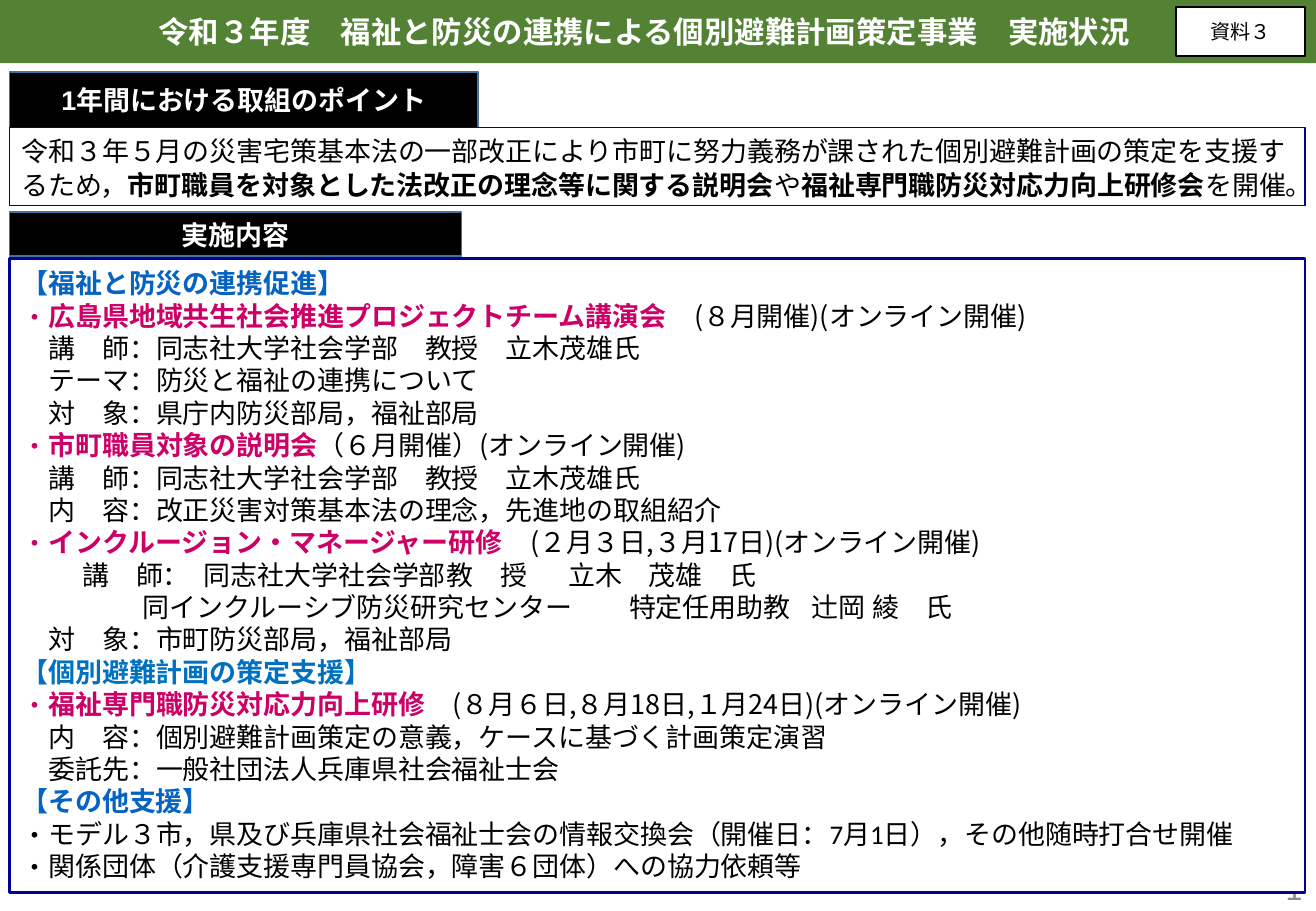
import dataclasses

import pptx
import pptx.dml.color
import pptx.enum.shapes
import pptx.enum.text
import pptx.oxml
import pptx.oxml.ns
import pptx.util

Cm = pptx.util.Cm
Pt = pptx.util.Pt
ALIGN = pptx.enum.text.PP_ALIGN
ANCHOR = pptx.enum.text.MSO_ANCHOR


@dataclasses.dataclass(frozen=True)
class Theme:
    green: str = "548235"
    navy: str = "000099"
    steel: str = "43739E"
    black: str = "000000"
    white: str = "FFFFFF"
    grey: str = "8C8C8C"
    pink: str = "CC0066"
    link_blue: str = "0563C1"
    blue: str = "0070C0"
    title_size: float = 18
    text_size: float = 16
    tag_size: float = 12
    latin: str = "Arial"
    digits: str = "Calibri"
    japanese: str = "Noto Sans CJK JP"


THEME = Theme()

LECTURER = "講　師：同志社大学社会学部　教授　立木茂雄氏"
SECTIONS = [
    ("福祉と防災の連携促進", THEME.link_blue, [
        ("広島県地域共生社会推進プロジェクトチーム講演会　", "(８月開催)(オンライン開催)",
         [LECTURER, "テーマ：防災と福祉の連携について", "対　象：県庁内防災部局，福祉部局"]),
        ("市町職員対象の説明会", "（６月開催）(オンライン開催)",
         [LECTURER, "内　容：改正災害対策基本法の理念，先進地の取組紹介"]),
        ("インクルージョン・マネージャー研修　", "(２月３日,３月17日)(オンライン開催)",
         ["\t講　師：\t同志社大学社会学部\t教　授\t立木　茂雄　氏",
          "\t\t同インクルーシブ防災研究センター\t特定任用助教\t辻岡\t綾　氏",
          "対　象：市町防災部局，福祉部局"]),
    ]),
    ("個別避難計画の策定支援", THEME.blue, [
        ("福祉専門職防災対応力向上研修　", "(８月６日,８月18日,１月24日)(オンライン開催)",
         ["内　容：個別避難計画策定の意義，ケースに基づく計画策定演習",
          "委託先：一般社団法人兵庫県社会福祉士会"]),
    ]),
    ("その他支援", THEME.link_blue, [
        ("", "モデル３市，県及び兵庫県社会福祉士会の情報交換会（開催日：7月1日），その他随時打合せ開催", []),
        ("", "関係団体（介護支援専門員協会，障害６団体）への協力依頼等", []),
    ]),
]
LECTURER_STOPS = [0.56, 2.83, 12.36, 16.9, 19.1]


def colour(value):
    return pptx.dml.color.RGBColor.from_string(value)


def add_span(para, text, size=THEME.text_size, color=THEME.black, bold=False, latin=THEME.latin):
    span = para.add_run()
    span.text = text
    span.font.size = Pt(size)
    span.font.bold = bold
    span.font.name = latin
    span.font.color.rgb = colour(color)
    east_asian = pptx.oxml.parse_xml(
        f'<a:ea {pptx.oxml.ns.nsdecls("a")} typeface="{THEME.japanese}"/>')
    span.font._element.find(pptx.oxml.ns.qn("a:latin")).addnext(east_asian)


def add_para(frame, first=False, align=ALIGN.LEFT, spacing=None, margin=0, bullet=False, stops=()):
    para = frame.paragraphs[0] if first else frame.add_paragraph()
    para.alignment = align
    if spacing:
        para.line_spacing = Pt(spacing)
    properties = para._p.get_or_add_pPr()
    properties.set("marL", str(Pt(margin)))
    properties.set("indent", str(Pt(-margin if bullet else 0)))
    namespace = pptx.oxml.ns.nsdecls("a")
    if bullet:
        properties.append(pptx.oxml.parse_xml(f'<a:buFont {namespace} typeface="{THEME.japanese}"/>'))
        properties.append(pptx.oxml.parse_xml(f'<a:buChar {namespace} char="・"/>'))
    else:
        properties.append(pptx.oxml.parse_xml(f"<a:buNone {namespace}/>"))
    if stops:
        tabs = "".join(f'<a:tab pos="{Cm(stop)}" algn="l"/>' for stop in stops)
        properties.append(pptx.oxml.parse_xml(f"<a:tabLst {namespace}>{tabs}</a:tabLst>"))
    return para


def add_panel(page, box, fill=None, line=None, weight=1, anchor=ANCHOR.MIDDLE):
    panel = page.shapes.add_shape(
        pptx.enum.shapes.MSO_SHAPE.RECTANGLE, *(Cm(length) for length in box))
    panel.shadow.inherit = False
    if fill:
        panel.fill.solid()
        panel.fill.fore_color.rgb = colour(fill)
    else:
        panel.fill.background()
    if line:
        panel.line.color.rgb = colour(line)
        panel.line.width = Pt(weight)
    else:
        panel.line.fill.background()
    panel.text_frame.word_wrap = True
    panel.text_frame.vertical_anchor = anchor
    return panel


def add_label(page, box, text, align=ALIGN.CENTER, **style):
    label = page.shapes.add_textbox(*(Cm(length) for length in box))
    frame = label.text_frame
    frame.word_wrap = True
    frame.vertical_anchor = ANCHOR.MIDDLE
    add_span(add_para(frame, first=True, align=align), text, **style)


def draw_banner(page, box):
    left, top, width, height = box
    add_panel(page, box, fill=THEME.green)
    add_label(page, (left + 2.95, top + 0.15, 21.03, height - 0.3),
              "令和３年度　福祉と防災の連携による個別避難計画策定事業　実施状況",
              size=THEME.title_size, color=THEME.white, bold=True)
    tag = add_panel(page, (left + width - 2.92, top + 0.15, 2.69, height - 0.3),
                    fill=THEME.white, line=THEME.black)
    add_span(add_para(tag.text_frame, first=True, align=ALIGN.CENTER), "資料３",
             size=THEME.tag_size, latin=THEME.digits)


def draw_heading(page, box, text):
    heading = add_panel(page, box, fill=THEME.black, line=THEME.steel)
    add_span(add_para(heading.text_frame, first=True, align=ALIGN.CENTER), text,
             color=THEME.white, bold=True)


def draw_summary(page, box):
    left, top, width, height = box
    draw_heading(page, (left, top, 9.8, 1.17), "1年間における取組のポイント")
    panel = add_panel(page, (left, top + 1.17, width, height - 1.17),
                      line=THEME.navy, anchor=ANCHOR.TOP)
    para = add_para(panel.text_frame, first=True, spacing=20)
    add_span(para, "令和３年５月の災害宅策基本法の一部改正により市町に努力義務が課された個別避難計画の策定を支援するため，")
    add_span(para, "市町職員を対象とした法改正の理念等に関する説明会", bold=True)
    add_span(para, "や")
    add_span(para, "福祉専門職防災対応力向上研修会", bold=True)
    add_span(para, "を開催。")


def draw_activities(page, box):
    left, top, width, height = box
    draw_heading(page, (left, top, 9.45, 0.92), "実施内容")
    panel = add_panel(page, (left, top + 0.97, width, height - 0.97), fill=THEME.white,
                      line=THEME.navy, weight=1.5, anchor=ANCHOR.TOP)
    frame = panel.text_frame
    frame.margin_top = Cm(0.17)
    pitch = 19.2
    for number, (section, tint, topics) in enumerate(SECTIONS):
        para = add_para(frame, first=number == 0, spacing=pitch)
        add_span(para, f"【{section}】", color=tint, bold=True, latin=THEME.digits)
        for topic, schedule, details in topics:
            para = add_para(frame, spacing=pitch, margin=THEME.text_size, bullet=True)
            if topic:
                add_span(para, topic, color=THEME.pink, bold=True, latin=THEME.japanese)
            add_span(para, schedule, latin=THEME.japanese if topic else THEME.digits)
            for detail in details:
                tabbed = detail.startswith("\t")
                para = add_para(frame, spacing=pitch, margin=0 if tabbed else THEME.text_size,
                                stops=LECTURER_STOPS if tabbed else ())
                add_span(para, detail, latin=THEME.japanese)


def main():
    deck = pptx.Presentation()
    deck.slide_width, deck.slide_height = Cm(27.51), Cm(19.05)
    page = deck.slides.add_slide(deck.slide_layouts[6])
    draw_banner(page, (0, 0, 27.51, 1.32))
    add_label(page, (24.18, 18.06, 3.3, 1.02), "1", align=ALIGN.RIGHT,
              size=THEME.title_size, color=THEME.grey)
    draw_summary(page, (0.2, 1.5, 27.08, 2.8))
    draw_activities(page, (0.2, 4.44, 27.08, 14.23))
    deck.save("out.pptx")


if __name__ == "__main__":
    main()
